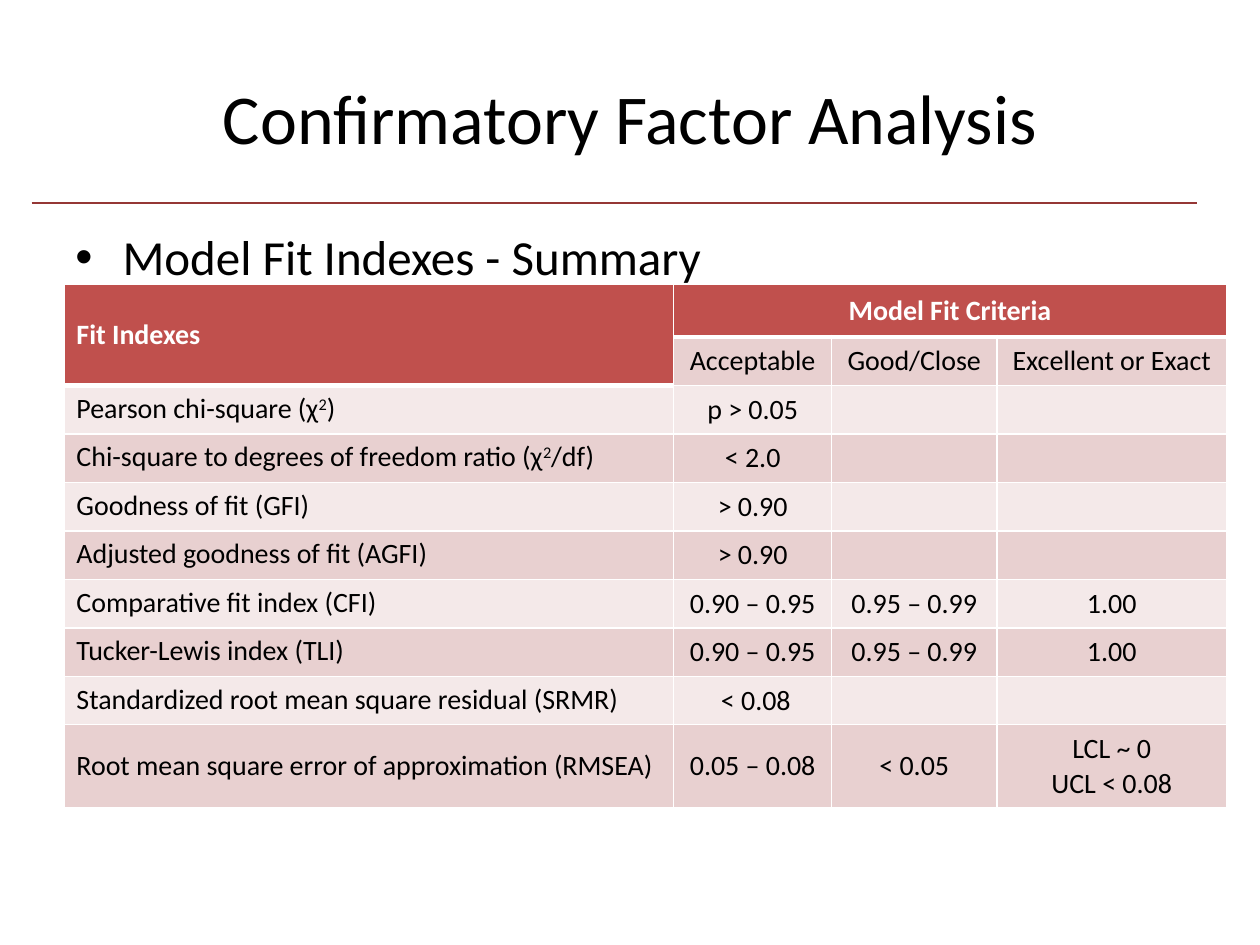
from lxml import etree
from pptx import Presentation
from pptx.dml.color import RGBColor
from pptx.enum.shapes import MSO_CONNECTOR
from pptx.enum.text import MSO_ANCHOR, PP_ALIGN
from pptx.oxml.ns import qn
from pptx.util import Pt

STRAIGHT = MSO_CONNECTOR.STRAIGHT
TOP, MIDDLE = MSO_ANCHOR.TOP, MSO_ANCHOR.MIDDLE
LEFT, CENTER = PP_ALIGN.LEFT, PP_ALIGN.CENTER

BLACK = RGBColor(0x00, 0x00, 0x00)
WHITE = RGBColor(0xFF, 0xFF, 0xFF)
RULE_RED = RGBColor(0x95, 0x37, 0x35)
HEADER_RED = RGBColor(0xC0, 0x50, 0x4D)
BANDS = (RGBColor(0xF4, 0xE9, 0xE9), RGBColor(0xE8, 0xD0, 0xD0))

FONT = "Calibri"
TABLE_SIZE = 16
COLUMN_WIDTHS = (348.5, 90.2, 94.5, 131.2)
ROW_HEIGHTS = (30.4,) + (27.7,) * 8 + (47.5,)
LEVELS = ("Acceptable", "Good/Close", "Excellent or Exact")
FIT_INDEXES = (
    ("Pearson chi-square (χ^2^)", "p > 0.05", "", ""),
    ("Chi-square to degrees of freedom ratio (χ^2^/df)", "< 2.0", "", ""),
    ("Goodness of fit (GFI)", "> 0.90", "", ""),
    ("Adjusted goodness of fit (AGFI)", "> 0.90", "", ""),
    ("Comparative fit index (CFI)", "0.90 – 0.95", "0.95 – 0.99", "1.00"),
    ("Tucker-Lewis index (TLI)", "0.90 – 0.95", "0.95 – 0.99", "1.00"),
    ("Standardized root mean square residual (SRMR)", " < 0.08", "", ""),
    ("Root mean square error of approximation (RMSEA)", "0.05 – 0.08", "< 0.05",
     "LCL ~ 0\nUCL < 0.08"),
)


def add_runs(paragraph, text, size, color=BLACK, bold=False):
    """Add the text run by run, with parts between carets as superscript."""
    for position, part in enumerate(text.split("^")):
        if not part:
            continue
        run = paragraph.add_run()
        run.text = part
        run.font.name = FONT
        run.font.size = Pt(size)
        run.font.bold = bold
        run.font.color.rgb = color
        if position % 2:
            run._r.get_or_add_rPr().set("baseline", "30000")


def add_text(slide, top, height, text, size, anchor, align):
    """Add a full-width text box and return its paragraph."""
    box = slide.shapes.add_textbox(Pt(36), Pt(top), Pt(648), Pt(height))
    frame = box.text_frame
    frame.word_wrap = True
    frame.vertical_anchor = anchor
    paragraph = frame.paragraphs[0]
    paragraph.alignment = align
    add_runs(paragraph, text, size)
    return paragraph


def add_bullet(paragraph):
    """Give the paragraph a hanging round bullet."""
    properties = paragraph._p.get_or_add_pPr()
    properties.set("marL", str(Pt(27)))
    properties.set("indent", str(-Pt(27)))
    etree.SubElement(properties, qn("a:buFont"), typeface="Arial")
    etree.SubElement(properties, qn("a:buChar"), char="•")


def add_rule(slide):
    """Draw the line under the title."""
    rule = slide.shapes.add_connector(STRAIGHT, Pt(18), Pt(116), Pt(684), Pt(116))
    rule.line.color.rgb = RULE_RED
    rule.line.width = Pt(1.5)
    etree.SubElement(rule._element.spPr, qn("a:effectLst"))


def style_cell(cell, fill, top_width=1, bottom_width=1):
    """Set the white borders and the fill of a cell."""
    properties = cell._tc.get_or_add_tcPr()
    widths = {"a:lnL": 1, "a:lnR": 1, "a:lnT": top_width, "a:lnB": bottom_width}
    for tag, width in widths.items():
        border = etree.SubElement(properties, qn(tag), w=str(Pt(width)))
        border_fill = etree.SubElement(border, qn("a:solidFill"))
        etree.SubElement(border_fill, qn("a:srgbClr"), val=str(WHITE))
    cell.fill.solid()
    cell.fill.fore_color.rgb = fill


def fill_cell(cell, text, align=CENTER, anchor=MIDDLE, color=BLACK, bold=False):
    """Write one paragraph per line of text into a cell."""
    cell.vertical_anchor = anchor
    frame = cell.text_frame
    for number, line in enumerate(text.split("\n")):
        paragraph = frame.add_paragraph() if number else frame.paragraphs[0]
        paragraph.alignment = align
        add_runs(paragraph, line, TABLE_SIZE, color, bold)
        if not line:
            etree.SubElement(paragraph._p, qn("a:endParaRPr"), sz=str(TABLE_SIZE * 100))


def add_fit_table(slide):
    """Add the table of fit indexes and their criteria."""
    table = slide.shapes.add_table(
        len(ROW_HEIGHTS), len(COLUMN_WIDTHS), Pt(36.5), Pt(162.2),
        Pt(sum(COLUMN_WIDTHS)), Pt(sum(ROW_HEIGHTS))).table
    for column, width in zip(table.columns, COLUMN_WIDTHS):
        column.width = Pt(width)
    for row, height in zip(table.rows, ROW_HEIGHTS):
        row.height = Pt(height)

    for r in range(len(ROW_HEIGHTS)):
        for c in range(len(COLUMN_WIDTHS)):
            header_end = 0 if c else 1
            style_cell(table.cell(r, c),
                       HEADER_RED if r <= header_end else BANDS[r % 2],
                       top_width=3 if r == header_end + 1 else 1,
                       bottom_width=3 if r <= header_end else 1)

    table.cell(0, 0).merge(table.cell(1, 0))
    table.cell(0, 1).merge(table.cell(0, 3))
    fill_cell(table.cell(0, 0), "Fit Indexes", LEFT, color=WHITE, bold=True)
    fill_cell(table.cell(0, 1), "Model Fit Criteria", color=WHITE, bold=True)
    for c, level in enumerate(LEVELS, 1):
        fill_cell(table.cell(1, c), level)
    last_row = len(ROW_HEIGHTS) - 1
    for r, (index_name, *criteria) in enumerate(FIT_INDEXES, 2):
        fill_cell(table.cell(r, 0), index_name, LEFT, MIDDLE if r == last_row else TOP)
        for c, criterion in enumerate(criteria, 1):
            fill_cell(table.cell(r, c), criterion)


def main():
    """Build the slide and save it."""
    presentation = Presentation()
    presentation.slide_width, presentation.slide_height = Pt(720), Pt(540)
    slide = presentation.slides.add_slide(presentation.slide_layouts[6])
    add_rule(slide)
    add_text(slide, 21.6, 90, "Confirmatory Factor Analysis", 40, MIDDLE, CENTER)
    summary = add_text(slide, 126, 356.4, "Model Fit Indexes - Summary", 28, TOP, LEFT)
    add_bullet(summary)
    add_fit_table(slide)
    presentation.save("out.pptx")


if __name__ == "__main__":
    main()
